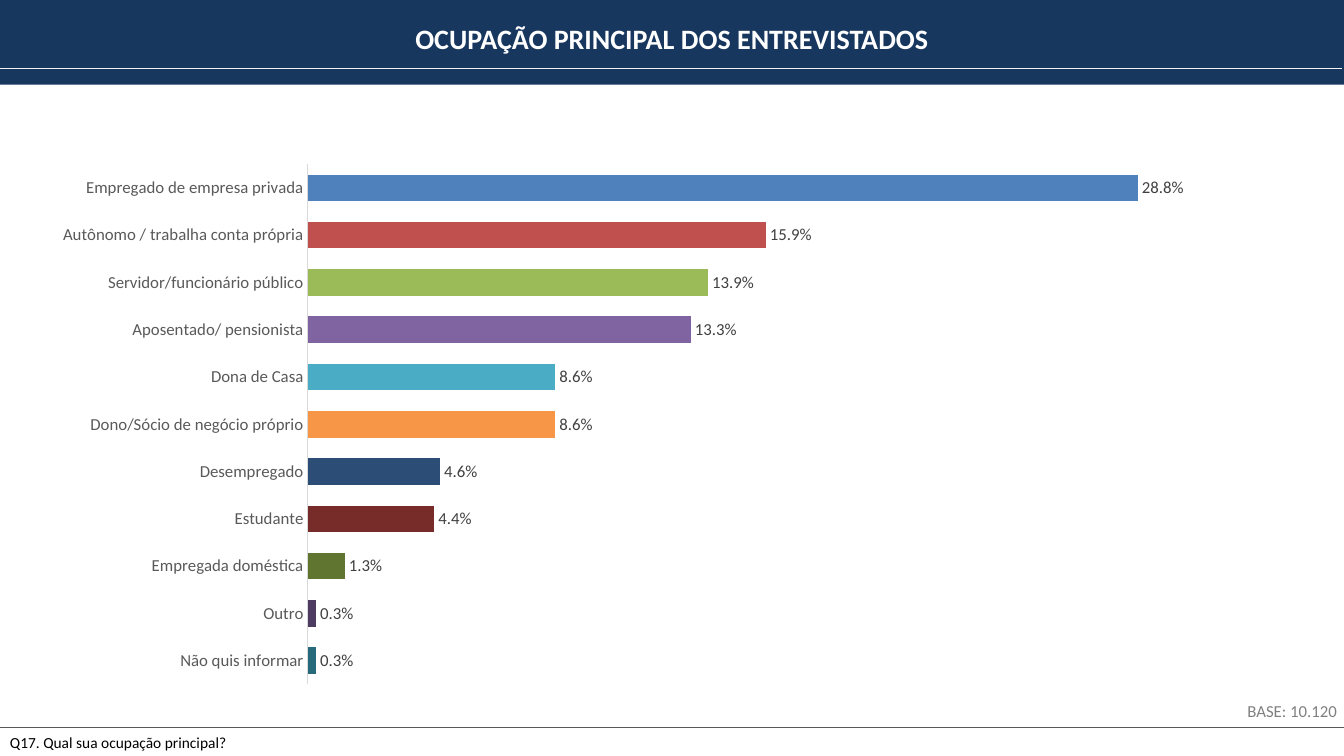
from lxml import etree
from pptx import Presentation
from pptx.chart.data import CategoryChartData
from pptx.dml.color import RGBColor
from pptx.enum import chart as ch, shapes, text
from pptx.oxml.ns import qn
from pptx.util import Inches, Pt

NAVY = RGBColor(0x17, 0x37, 0x5E)
WHITE = RGBColor(0xFF, 0xFF, 0xFF)
BLACK = RGBColor(0, 0, 0)
OFF_WHITE = RGBColor(0xF2, 0xF2, 0xF2)
AXIS_GRAY = RGBColor(0xD9, 0xD9, 0xD9)
CATEGORY_GRAY = RGBColor(0x59, 0x59, 0x59)
LABEL_GRAY = RGBColor(0x40, 0x40, 0x40)
BASE_GRAY = RGBColor(0x80, 0x80, 0x80)
FONT = "Calibri"
LEFT, CENTER, RIGHT = text.PP_ALIGN.LEFT, text.PP_ALIGN.CENTER, text.PP_ALIGN.RIGHT

OCCUPATIONS = [
    ("Empregado de empresa privada", 0.288, RGBColor(0x4F, 0x81, 0xBD)),
    ("Autônomo / trabalha conta própria", 0.159, RGBColor(0xC0, 0x50, 0x4D)),
    ("Servidor/funcionário público", 0.139, RGBColor(0x9B, 0xBB, 0x59)),
    ("Aposentado/ pensionista", 0.133, RGBColor(0x80, 0x64, 0xA2)),
    ("Dona de Casa", 0.086, RGBColor(0x4B, 0xAC, 0xC6)),
    ("Dono/Sócio de negócio próprio", 0.086, RGBColor(0xF7, 0x96, 0x46)),
    ("Desempregado", 0.046, RGBColor(0x2C, 0x4D, 0x75)),
    ("Estudante", 0.044, RGBColor(0x77, 0x2C, 0x2A)),
    ("Empregada doméstica", 0.013, RGBColor(0x5F, 0x75, 0x30)),
    ("Outro", 0.003, RGBColor(0x4D, 0x3B, 0x62)),
    ("Não quis informar", 0.003, RGBColor(0x27, 0x6A, 0x7C)),
]
TEXTS = [
    ("OCUPAÇÃO PRINCIPAL DOS ENTREVISTADOS", (0, 0.16, 13.33, 0.44), 20, WHITE, True, CENTER),
    ("Q17. Qual sua ocupação principal?", (0, 7.22, 6.66, 0.29), 11, BLACK, False, LEFT),
    ("BASE: 10.120", (11.08, 6.9, 2.28, 0.3), 12, BASE_GRAY, False, RIGHT),
]
CHART_BOX = (0.39, 1.52, 11.48, 5.37)
PLOT_BOX = (3.05, 1.63, 8.58, 5.16)


def set_font(font, size, color, bold=False):
    font.name, font.size, font.bold = FONT, Pt(size), bold
    font.color.rgb = color


def add_rule(s, x1, x2, y, color, width):
    line = s.shapes.add_connector(
        shapes.MSO_CONNECTOR.STRAIGHT, Inches(x1), Inches(y), Inches(x2), Inches(y))
    line.line.color.rgb = color
    line.line.width = Pt(width)
    etree.SubElement(line._element.spPr, qn("a:effectLst"))


def add_text(s, words, box, size, color, bold, align):
    tf = s.shapes.add_textbox(*map(Inches, box)).text_frame
    tf.word_wrap = True
    p = tf.paragraphs[0]
    p.text, p.alignment = words, align
    set_font(p.font, size, color, bold)


def place_plot(chart):
    area = chart._chartSpace.chart.plotArea
    for old in area.findall(qn("c:layout")):
        area.remove(old)
    layout = etree.Element(qn("c:layout"))
    area.insert(0, layout)
    manual = etree.SubElement(layout, qn("c:manualLayout"))
    cx, cy, cw, chh = CHART_BOX
    px, py, pw, ph = PLOT_BOX
    settings = [("layoutTarget", "inner"), ("xMode", "edge"), ("yMode", "edge"),
                ("x", (px - cx) / cw), ("y", (py - cy) / chh),
                ("w", pw / cw), ("h", ph / chh)]
    for tag, value in settings:
        etree.SubElement(manual, qn("c:" + tag)).set("val", str(value))


def add_occupation_chart(s):
    data = CategoryChartData(number_format="0.0%")
    data.categories = [name for name, _, _ in OCCUPATIONS]
    data.add_series("Series 1", [share for _, share, _ in OCCUPATIONS])
    chart = s.shapes.add_chart(
        ch.XL_CHART_TYPE.BAR_CLUSTERED, *map(Inches, CHART_BOX), data).chart
    chart.has_legend = chart.has_title = False
    set_font(chart.font, 10, BLACK)

    cat = chart.category_axis
    cat.reverse_order = True
    cat.has_major_gridlines = False
    cat.major_tick_mark = ch.XL_TICK_MARK.NONE
    cat.format.line.color.rgb = AXIS_GRAY
    cat.format.line.width = Pt(0.75)
    set_font(cat.tick_labels.font, 12, CATEGORY_GRAY)

    val = chart.value_axis
    val.minimum_scale, val.maximum_scale = 0, 0.3
    val.has_major_gridlines = False
    val.visible = False

    plot = chart.plots[0]
    plot.gap_width = 78
    plot.vary_by_categories = False
    plot.has_data_labels = True
    labels = plot.data_labels
    labels.show_value = True
    labels.number_format, labels.number_format_is_linked = "0.0%", False
    labels.position = ch.XL_LABEL_POSITION.OUTSIDE_END
    set_font(labels.font, 12, LABEL_GRAY)
    for i, (_, _, color) in enumerate(OCCUPATIONS):
        fill = plot.series[0].points[i].format.fill
        fill.solid()
        fill.fore_color.rgb = color
    place_plot(chart)


def main():
    prs = Presentation()
    prs.slide_width, prs.slide_height = Inches(13.33), Inches(7.5)
    s = prs.slides.add_slide(prs.slide_layouts[6])
    add_rule(s, 0, 13.33, 7.22, CATEGORY_GRAY, 0.75)
    band = s.shapes.add_shape(
        shapes.MSO_SHAPE.RECTANGLE, Inches(-0.01), 0, Inches(13.34), Inches(0.84))
    band.shadow.inherit = False
    band.fill.solid()
    band.fill.fore_color.rgb = NAVY
    band.line.fill.background()
    add_rule(s, -0.03, 13.31, 0.68, OFF_WHITE, 1)
    for item in TEXTS:
        add_text(s, *item)
    add_occupation_chart(s)
    prs.save("out.pptx")


if __name__ == "__main__":
    main()
